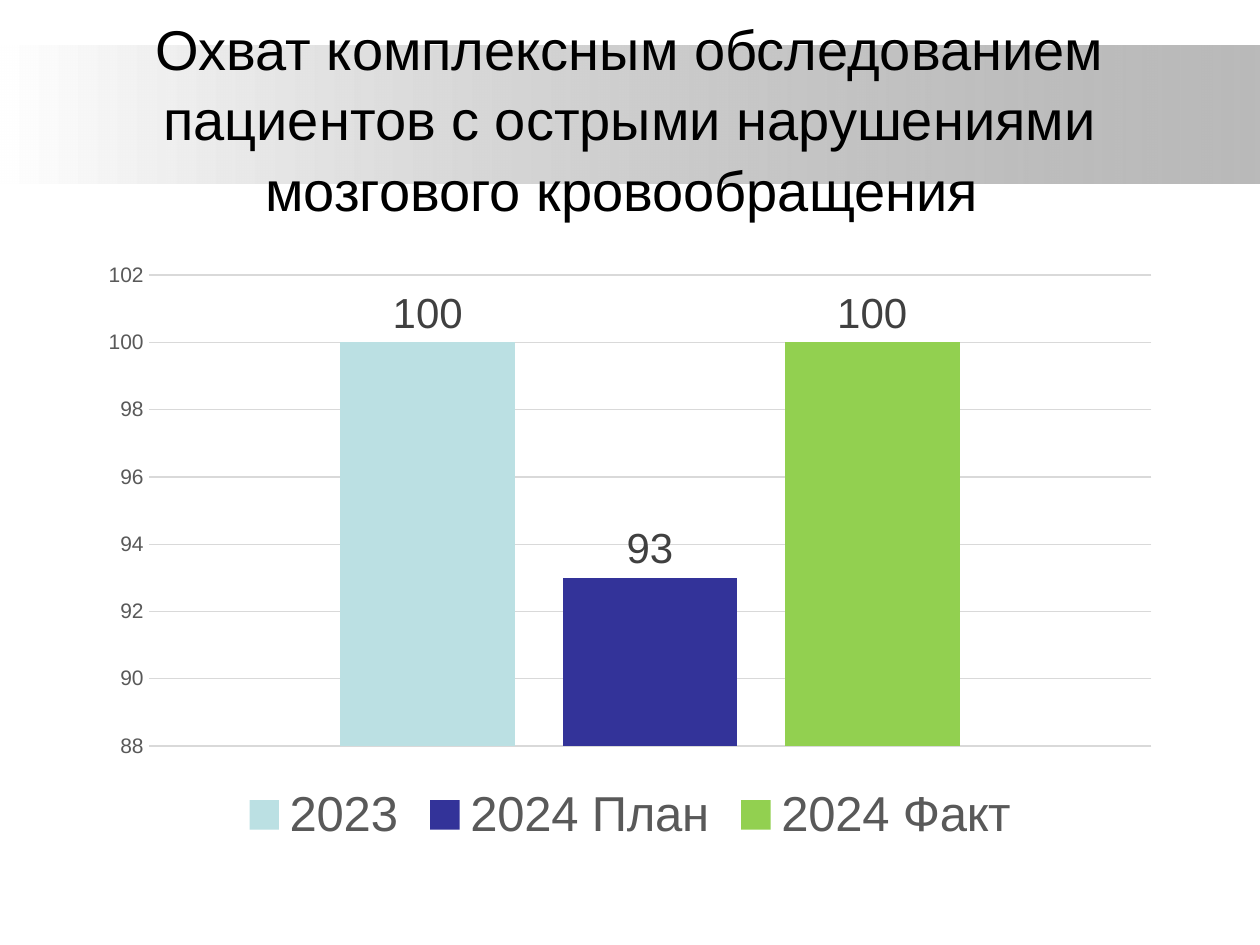
import pptx
import pptx.chart.data
import pptx.dml.color
import pptx.enum.chart
import pptx.enum.shapes
import pptx.enum.text
import pptx.oxml
import pptx.util

Inches = pptx.util.Inches
Pt = pptx.util.Pt
RGBColor = pptx.dml.color.RGBColor

FONT = "Arial"
BLACK = RGBColor(0x00, 0x00, 0x00)
WHITE = RGBColor(0xFF, 0xFF, 0xFF)
GRAY = RGBColor(0x80, 0x80, 0x80)
GRID = RGBColor(0xD9, 0xD9, 0xD9)
TEXT = RGBColor(0x59, 0x59, 0x59)
LABEL = RGBColor(0x40, 0x40, 0x40)
AQUA = RGBColor(0xBB, 0xE0, 0xE3)
NAVY = RGBColor(0x33, 0x33, 0x99)
GREEN = RGBColor(0x92, 0xD0, 0x50)


class Deck:
    def __init__(self):
        self.show = pptx.Presentation()
        self.show.slide_width = Inches(10)
        self.show.slide_height = Inches(7.5)
        self.slide = self.show.slides.add_slide(self.show.slide_layouts[5])

    def style(self, font, size, color):
        font.name = FONT
        font.size = Pt(size)
        font.color.rgb = color

    def band(self, left, top, width, height):
        """Fading band, placed behind everything else."""
        shapes = self.slide.shapes
        band = shapes.add_shape(
            pptx.enum.shapes.MSO_SHAPE.RECTANGLE,
            Inches(left), Inches(top), Inches(width), Inches(height))
        band.shadow.inherit = False
        band.line.fill.background()
        band.fill.gradient()
        band.fill.gradient_angle = 0
        stops = band.fill.gradient_stops
        for stop, place, color in zip(stops, (0, 1), (WHITE, GRAY)):
            stop.position = place
            stop.color.rgb = color
        # The gray end is 54 % opaque
        tint = band.element.spPr.findall(".//" + pptx.oxml.ns.qn("a:srgbClr"))[-1]
        alpha = pptx.oxml.parse_xml(
            f'<a:alpha {pptx.oxml.ns.nsdecls("a")} val="54000"/>')
        tint.append(alpha)
        shapes._spTree.insert(2, band.element)

    def title(self, text, left, top, width, height):
        title = self.slide.shapes.title
        title.left, title.top = Inches(left), Inches(top)
        title.width, title.height = Inches(width), Inches(height)
        frame = title.text_frame
        frame.text = text
        frame.word_wrap = True
        frame.auto_size = pptx.enum.text.MSO_AUTO_SIZE.NONE
        frame.vertical_anchor = pptx.enum.text.MSO_ANCHOR.MIDDLE
        par = frame.paragraphs[0]
        par.alignment = pptx.enum.text.PP_ALIGN.CENTER
        par.line_spacing = 1.05
        self.style(par.runs[0].font, 32, BLACK)

    def chart(self, series, left, top, width, height):
        enum = pptx.enum.chart
        data = pptx.chart.data.CategoryChartData()
        data.categories = ["1"]
        for name, value, _ in series:
            data.add_series(name, [value])
        chart = self.slide.shapes.add_chart(
            enum.XL_CHART_TYPE.COLUMN_CLUSTERED,
            Inches(left), Inches(top), Inches(width), Inches(height),
            data).chart
        self.style(chart.font, 10, BLACK)
        chart.has_title = False

        # Legend
        chart.has_legend = True
        chart.legend.position = enum.XL_LEGEND_POSITION.BOTTOM
        chart.legend.include_in_layout = False
        self.style(chart.legend.font, 28, TEXT)

        # Axes
        chart.category_axis.visible = False
        axis = chart.value_axis
        axis.minimum_scale, axis.maximum_scale = 88, 102
        axis.major_unit = 2
        axis.major_tick_mark = enum.XL_TICK_MARK.NONE
        axis.minor_tick_mark = enum.XL_TICK_MARK.NONE
        axis.format.line.fill.background()
        axis.major_gridlines.format.line.color.rgb = GRID
        axis.major_gridlines.format.line.width = Pt(0.75)
        self.style(axis.tick_labels.font, 12, TEXT)

        # Columns
        plot = chart.plots[0]
        plot.vary_by_categories = False
        plot.gap_width, plot.overlap = 219, -27
        for column, (_, _, color) in zip(plot.series, series):
            column.format.fill.solid()
            column.format.fill.fore_color.rgb = color
            column.invert_if_negative = False
            labels = column.data_labels
            labels.show_value = True
            labels.position = enum.XL_LABEL_POSITION.OUTSIDE_END
            self.style(labels.font, 24, LABEL)


def main():
    deck = Deck()
    deck.band(0, 0.36, 10, 1.1)
    deck.title("Охват комплексным обследованием пациентов с острыми "
               "нарушениями мозгового кровообращения ", 0.5, 0.3, 9, 1.25)
    deck.chart([("2023", 100, AQUA),
                ("2024 План", 93, NAVY),
                ("2024 Факт", 100, GREEN)], 0.69, 2, 8.62, 4.76)
    deck.show.save("out.pptx")


if __name__ == "__main__":
    main()
